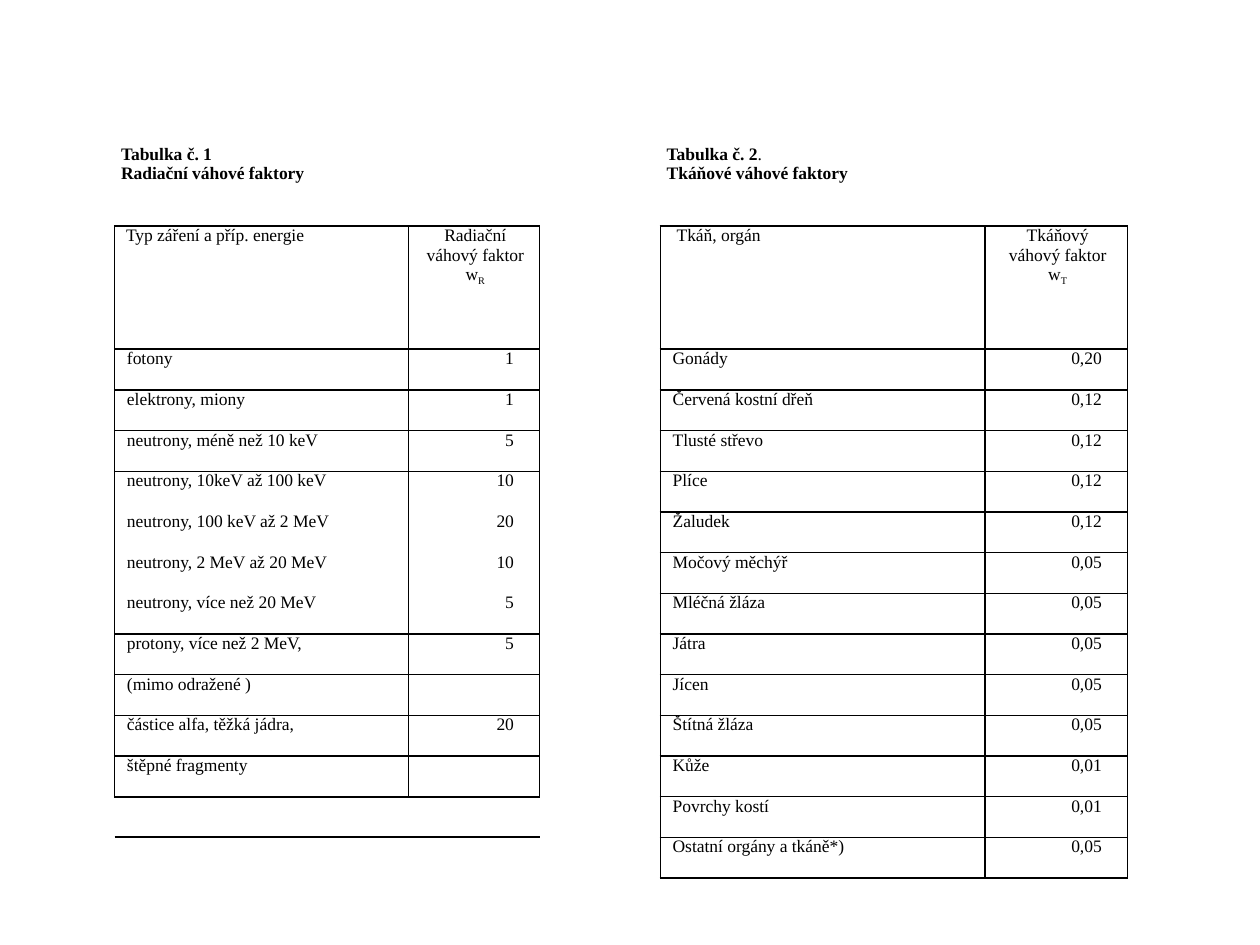
from lxml.etree import SubElement
from pptx import Presentation
from pptx.dml.color import RGBColor
from pptx.enum.text import PP_ALIGN
from pptx.oxml import parse_xml
from pptx.oxml.ns import nsdecls, qn
from pptx.util import Cm, Pt

COLORS = {"ink": "000000"}
FONT = "Times New Roman"
FONT_SIZE = 10
NO_STYLE = "{2D5ABB26-0587-4C30-8999-92F81FD0307C}"
COLUMN_WIDTHS = [5.92, 2.65, 2.43, 6.55, 2.87]
ROW_HEIGHTS = [1.64, 2.48] + [0.82] * 13
THIN, THICK = 1, 1.5
OPPOSITE = {"L": (0, -1, "R"), "R": (0, 1, "L"), "T": (-1, 0, "B"), "B": (1, 0, "T")}

RADIATION = {
    "title": [("Tabulka č. 1", "bold"), ("\n", ""), ("Radiační váhové faktory", "bold")],
    "label": "Typ záření a příp. energie",
    "label_indent": 0.1,
    "factor": [("Radiační váhový faktor w", ""), ("R", "subscript")],
    "groups": [
        [("fotony", "1")],
        [("elektrony, miony", "1")],
        [("neutrony, méně než 10 keV", "5"), ("neutrony, 10keV až 100 keV", "10"),
         ("neutrony, 100 keV až 2 MeV", "20"), ("neutrony, 2 MeV až 20 MeV", "10"),
         ("neutrony, více než 20 MeV", "5")],
        [("protony, více než 2 MeV,", "5"), ("(mimo odražené )", "")],
        [("částice alfa, těžká jádra,", "20"), ("štěpné fragmenty", "")],
    ],
}
TISSUE = {
    "title": [("Tabulka č. 2", "bold"), (".", ""), ("\n", ""), ("Tkáňové váhové faktory", "bold")],
    "label": "Tkáň, orgán",
    "label_indent": 0.2,
    "factor": [("Tkáňový", ""), ("\n", ""), ("váhový faktor w", ""), ("T", "subscript")],
    "groups": [[organ] for organ in [
        ("Gonády", "0,20"), ("Červená kostní dřeň", "0,12"), ("Tlusté střevo", "0,12"),
        ("Plíce", "0,12"), ("Žaludek", "0,12"), ("Močový měchýř", "0,05"),
        ("Mléčná žláza", "0,05"), ("Játra", "0,05"), ("Jícen", "0,05"),
        ("Štítná žláza", "0,05"), ("Kůže", "0,01"), ("Povrchy kostí", "0,01"),
        ("Ostatní orgány a tkáně*)", "0,05")]],
}


def write_cell(cell, runs, align=PP_ALIGN.LEFT, indent=0, right_margin=0.13):
    """Write styled runs into a cell as one paragraph."""
    cell.margin_right = Cm(right_margin)
    para = cell.text_frame.paragraphs[0]
    para.alignment = align
    para.space_before = para.space_after = Pt(2)
    para._p.get_or_add_pPr().set("marL", str(Cm(indent)))
    for text, style in runs:
        if text == "\n":
            para.add_line_break()
            SubElement(para._p[-1], qn("a:rPr"), sz=str(FONT_SIZE * 100))
            continue
        span = para.add_run()
        span.text = text
        span.font.name = FONT
        span.font.size = Pt(FONT_SIZE)
        span.font.bold = style == "bold"
        span.font.color.rgb = RGBColor.from_string(COLORS["ink"])
        if style == "subscript":
            span.font._element.set("baseline", "-25000")


def mark_edge(edges, row, column, side, width):
    """Record a border on a cell and on the neighbour that shares it."""
    row_step, column_step, other_side = OPPOSITE[side]
    edges.setdefault((row, column), {})[side] = width
    edges.setdefault((row + row_step, column + column_step), {})[other_side] = width


def fill_factors(table, edges, first, content):
    """Fill two columns with a title, a header and groups of factors."""
    write_cell(table.cell(0, first), content["title"])
    write_cell(table.cell(1, first), [(content["label"], "")],
               PP_ALIGN.JUSTIFY, content["label_indent"])
    write_cell(table.cell(1, first + 1), content["factor"], PP_ALIGN.CENTER, 0.2, 0.28)
    row = 2
    group_ends = []
    for group in content["groups"]:
        for name, value in group:
            write_cell(table.cell(row, first), [(name, "")], PP_ALIGN.JUSTIFY, 0.12)
            if value:
                write_cell(table.cell(row, first + 1), [(value, "")], PP_ALIGN.RIGHT, 0.13, 0.52)
            row += 1
        group_ends.append(row - 1)
    for column in (first, first + 1):
        for inner in range(1, row):
            mark_edge(edges, inner, column, "L", THIN)
            mark_edge(edges, inner, column, "R", THIN)
        for end in group_ends:
            mark_edge(edges, end, column, "B", THIN)
        for end in (0, 1, row - 1):
            mark_edge(edges, end, column, "B", THICK)


def draw_edges(cell, sides):
    """Put the recorded borders on a cell in schema order."""
    properties = cell._tc.get_or_add_tcPr()
    for index, side in enumerate(side for side in "LRTB" if side in sides):
        properties.insert(index, parse_xml(
            f'<a:ln{side} {nsdecls("a")} w="{Pt(sides[side])}"><a:solidFill>'
            f'<a:srgbClr val="{COLORS["ink"]}"/></a:solidFill></a:ln{side}>'))


def build_table(page, left, top):
    """Place the grid that holds both lists of factors."""
    frame = page.shapes.add_table(len(ROW_HEIGHTS), len(COLUMN_WIDTHS), Cm(left), Cm(top),
                                  Cm(sum(COLUMN_WIDTHS)), Cm(sum(ROW_HEIGHTS)))
    table = frame.table
    table.first_row = table.horz_banding = False
    table._tbl.tblPr.find(qn("a:tableStyleId")).text = NO_STYLE
    for column, width in zip(table.columns, COLUMN_WIDTHS):
        column.width = Cm(width)
    for row, height in zip(table.rows, ROW_HEIGHTS):
        row.height = Cm(height)
    for cell in table.iter_cells():
        cell.margin_left = cell.margin_right = Cm(0.13)
        cell.margin_top = cell.margin_bottom = 0
        cell.fill.background()
    edges = {}
    fill_factors(table, edges, 0, RADIATION)
    fill_factors(table, edges, 3, TISSUE)
    for row in range(len(ROW_HEIGHTS)):
        for column in range(len(COLUMN_WIDTHS)):
            cell = table.cell(row, column)
            draw_edges(cell, edges.get((row, column), {}))
            ending = cell.text_frame.paragraphs[0]._p.get_or_add_endParaRPr()
            ending.set("sz", str(FONT_SIZE * 100))


def main():
    """Build the deck and save it."""
    deck = Presentation()
    deck.slide_width, deck.slide_height = Cm(25.4), Cm(19.05)
    page = deck.slides.add_slide(deck.slide_layouts[6])
    build_table(page, 2.31, 2.92)
    deck.save("out.pptx")


if __name__ == "__main__":
    main()
